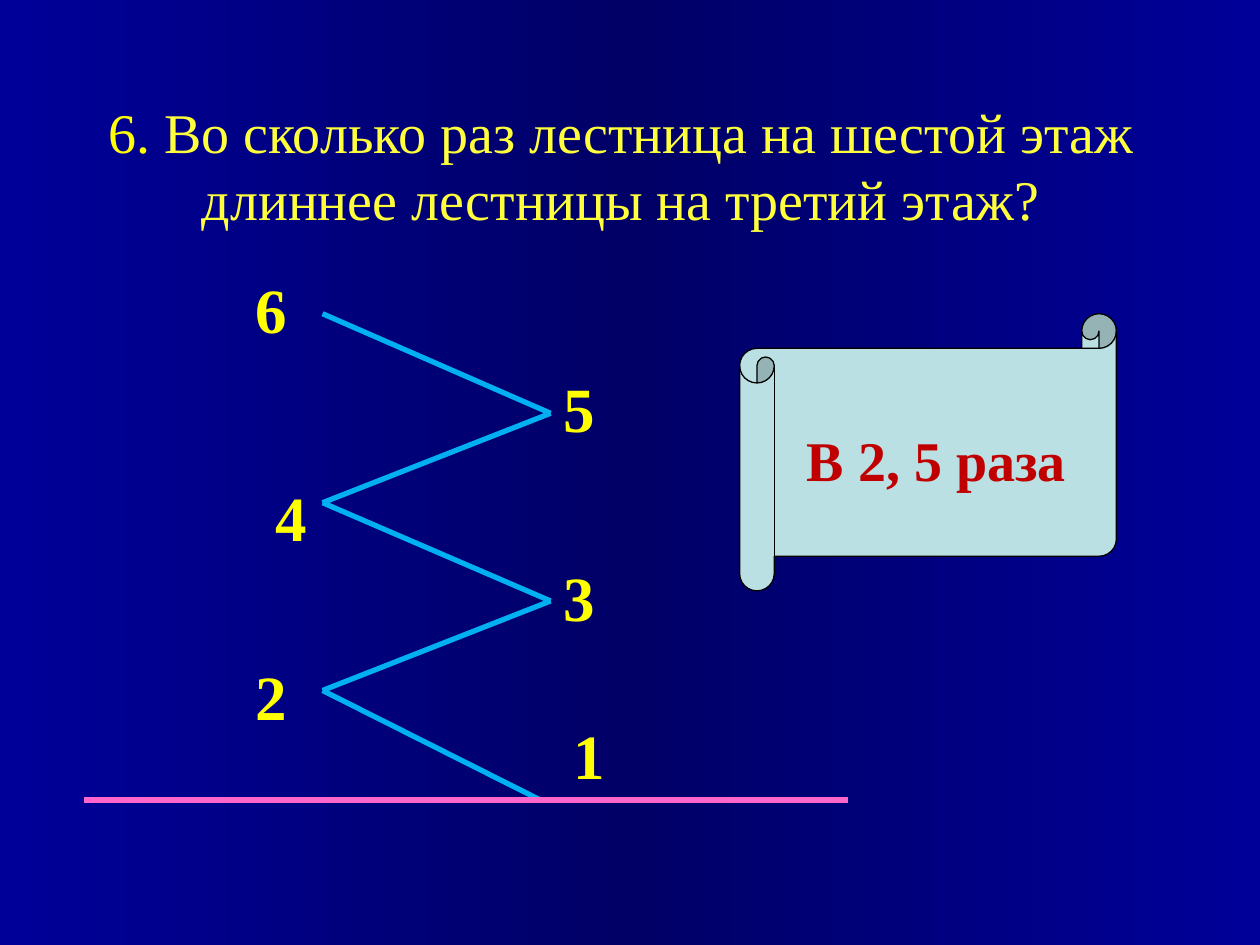
from copy import deepcopy

from lxml import etree
from pptx import Presentation
from pptx.dml.color import RGBColor
from pptx.enum.shapes import MSO_CONNECTOR, MSO_SHAPE
from pptx.enum.text import MSO_ANCHOR, MSO_AUTO_SIZE, PP_ALIGN
from pptx.oxml.ns import qn
from pptx.util import Inches, Pt

STRAIGHT = MSO_CONNECTOR.STRAIGHT
SCROLL = MSO_SHAPE.HORIZONTAL_SCROLL
MIDDLE = MSO_ANCHOR.MIDDLE
CENTER = PP_ALIGN.CENTER
LEFT = PP_ALIGN.LEFT
NO_AUTOFIT = MSO_AUTO_SIZE.NONE
FIT_SHAPE = MSO_AUTO_SIZE.SHAPE_TO_FIT_TEXT


def rgb(color):
    return RGBColor.from_string(color)


def add_text(paragraph, text, size=32, color="FFFF00", bold=False, align=CENTER):
    paragraph.alignment = align
    run = paragraph.add_run()
    run.text = text
    run.font.name = "Times New Roman"
    run.font.size = Pt(size)
    run.font.bold = bold
    run.font.color.rgb = rgb(color)


presentation = Presentation()
presentation.slide_width = Inches(10)
presentation.slide_height = Inches(7.5)
slide = presentation.slides.add_slide(presentation.slide_layouts[5])

background = slide.background.fill
background.gradient()
background.gradient_angle = 0
stop_list = next(slide.element.iter(qn("a:gsLst")))
stop_list.insert(1, deepcopy(stop_list[0]))
gradient = [(0, "000099"), (0.5, "000066"), (1, "000099")]
for stop, (position, color) in zip(background.gradient_stops, gradient):
    stop.position = position
    stop.color.rgb = rgb(color)

title = slide.shapes.title
title.left, title.top = Inches(0.43), Inches(0.91)
title.width, title.height = Inches(9), Inches(1.25)
title_frame = title.text_frame
title_frame.auto_size = NO_AUTOFIT
title_frame.vertical_anchor = MIDDLE
title_frame.margin_bottom = Inches(0.51)
question = title_frame.paragraphs[0]
add_text(question, "6. ")
add_text(question, "Во сколько раз лестница на шестой этаж длиннее лестницы на третий этаж?",
         color="FFFF3B")

answer = slide.shapes.add_shape(SCROLL, Inches(5.87), Inches(2.49), Inches(2.99), Inches(2.2))
answer.shadow.inherit = False
answer.fill.solid()
answer.fill.fore_color.rgb = rgb("BBE0E3")
answer.line.color.rgb = rgb("000000")
answer.line.width = Pt(0.75)
answer.text_frame.vertical_anchor = MIDDLE
answer.text_frame.margin_top = Inches(0.16)
add_text(answer.text_frame.paragraphs[0], "В 2, 5 раза", color="C00000", bold=True)

landings = [(4.29, 6.35), (2.56, 5.48), (4.37, 4.77), (2.56, 3.99), (4.37, 3.28), (2.56, 2.49)]
lines = [(start, end, "00B0F0") for start, end in zip(landings, landings[1:])]
lines.append(((0.67, 6.35), (6.73, 6.35), "FF66CC"))
for start, end, color in lines:
    line = slide.shapes.add_connector(STRAIGHT, *map(Inches, start + end))
    line.line.color.rgb = rgb(color)
    line.line.width = Pt(3)
    etree.SubElement(line.element.spPr, qn("a:effectLst"))

floor_labels = [(4.45, 5.64), (1.93, 5.17), (4.37, 4.38), (2.09, 3.75), (4.37, 2.88), (1.93, 2.1)]
for floor, (left, top) in enumerate(floor_labels, start=1):
    label = slide.shapes.add_textbox(Inches(left), Inches(top), Inches(0.39), Inches(0.71))
    label.text_frame.word_wrap = True
    label.text_frame.auto_size = FIT_SHAPE
    add_text(label.text_frame.paragraphs[0], str(floor), size=36, bold=True, align=LEFT)

presentation.save("out.pptx")
